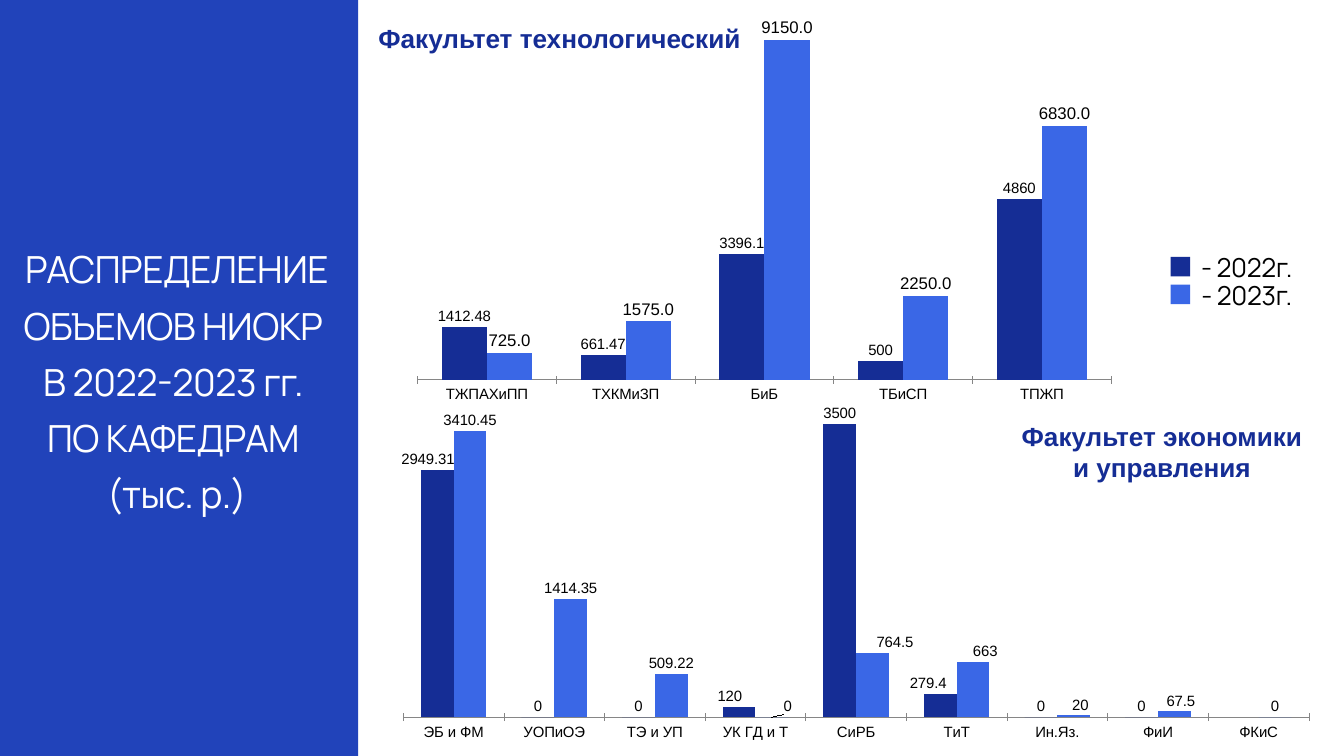
import pptx
import pptx.chart.data
import pptx.dml.color
import pptx.enum.chart
import pptx.enum.shapes
import pptx.enum.text
import pptx.util
from lxml import etree
from pptx.oxml.ns import qn

Cm = pptx.util.Cm
Pt = pptx.util.Pt
RGBColor = pptx.dml.color.RGBColor

PANEL_BLUE = RGBColor(0x21, 0x43, 0xBA)
NAVY = RGBColor(0x15, 0x2D, 0x95)
BRIGHT_BLUE = RGBColor(0x3A, 0x67, 0xE6)
AXIS_GREY = RGBColor(0x86, 0x86, 0x86)
WHITE = RGBColor(0xFF, 0xFF, 0xFF)
BLACK = RGBColor(0, 0, 0)

YEARS = [("2022", NAVY), ("2023", BRIGHT_BLUE)]

TITLE_LINES = ["РАСПРЕДЕЛЕНИЕ", "ОБЪЕМОВ НИОКР ", "В 2022-2023 гг. ",
               "ПО КАФЕДРАМ ", "(тыс. р.)"]

TECHNOLOGY = {
    "ТЖПАХиПП": (1412.48, 725),
    "ТХКМиЗП": (661.47, 1575),
    "БиБ": (3396.1, 9150),
    "ТБиСП": (500, 2250),
    "ТПЖП": (4860, 6830),
}
ECONOMICS = {
    "ЭБ и ФМ": (2949.31, 3410.45),
    "УОПиОЭ": (0, 1414.35),
    "ТЭ и УП": (0, 509.22),
    "УК ГД и Т": (120, 0),
    "СиРБ": (3500, 764.5),
    "ТиТ": (279.4, 663),
    "Ин.Яз.": (0, 20),
    "ФиИ": (0, 67.5),
    "ФКиС": (None, 0),
}
# Sideways label shifts per year, as shares of the chart width
ECONOMICS_SHIFTS = [
    {0: -0.01, 3: -0.01, 5: -0.013},
    {3: 0.017, 4: 0.024, 5: 0.013, 6: 0.007, 7: 0.007},
]


def place(shape, left, top, width, height):
    shape.left, shape.top = Cm(left), Cm(top)
    shape.width, shape.height = Cm(width), Cm(height)


def add_rectangle(shapes, left, top, width, height, color):
    rectangle = shapes.add_shape(pptx.enum.shapes.MSO_SHAPE.RECTANGLE,
                                 Cm(left), Cm(top), Cm(width), Cm(height))
    rectangle.shadow.inherit = False
    rectangle.fill.solid()
    rectangle.fill.fore_color.rgb = color
    rectangle.line.fill.background()
    return rectangle


def style_font(font, size, name, color, bold=False):
    font.size, font.name, font.bold = Pt(size), name, bold
    font.color.rgb = color


def write_tight_lines(frame, lines, size, color, leading, tracking):
    """Write centred Manrope lines with exact leading and letter spacing, both in points."""
    frame.margin_left = frame.margin_right = 0
    frame.margin_top = frame.margin_bottom = 0
    frame.word_wrap = True
    frame.auto_size = pptx.enum.text.MSO_AUTO_SIZE.NONE
    frame.vertical_anchor = pptx.enum.text.MSO_ANCHOR.TOP
    for number, line in enumerate(lines):
        paragraph = frame.add_paragraph() if number else frame.paragraphs[0]
        paragraph.alignment = pptx.enum.text.PP_ALIGN.CENTER
        paragraph.line_spacing = Pt(leading)
        paragraph.space_before = Pt(0)
        style_font(paragraph.font, size, "Manrope", color)
        run = paragraph.add_run()
        run.text = line
        run._r.get_or_add_rPr().set("spc", str(round(tracking * 100)))


def add_heading(slide, text, left, top, width, height, wrap):
    frame = slide.shapes.add_textbox(Cm(left), Cm(top), Cm(width), Cm(height)).text_frame
    frame.word_wrap = wrap
    paragraph = frame.paragraphs[0]
    paragraph.text = text
    paragraph.alignment = pptx.enum.text.PP_ALIGN.CENTER
    style_font(paragraph.font, 28, "Arial", NAVY, bold=True)


def add_layout(parent, position, **settings):
    """Insert a manual layout at a child position of a chart element."""
    layout = etree.Element(qn("c:layout"))
    manual = etree.SubElement(layout, qn("c:manualLayout"))
    for tag, value in settings.items():
        etree.SubElement(manual, qn(f"c:{tag}")).set("val", str(value))
    parent.insert(position, layout)


def shift_label(series, index, shift):
    label = series.points[index].data_label
    style_font(label.font, 16, "Arial", BLACK)
    label.position = pptx.enum.chart.XL_LABEL_POSITION.OUTSIDE_END
    element = series._element.xpath(f'c:dLbls/c:dLbl[c:idx/@val="{index}"]')[0]
    add_layout(element, 1, x=shift, y=0)


def add_volume_chart(slide, box, volumes, axis_max, plot_area, label_styles, shifts=({}, {})):
    """Add paired yearly columns; label_styles holds (size, number format) per year."""
    chart_data = pptx.chart.data.CategoryChartData()
    chart_data.categories = list(volumes)
    for (year, _), values in zip(YEARS, zip(*volumes.values())):
        chart_data.add_series(year, values)
    chart = slide.shapes.add_chart(pptx.enum.chart.XL_CHART_TYPE.COLUMN_CLUSTERED,
                                   *map(Cm, box), chart_data).chart
    chart.has_legend = False
    chart.has_title = False
    style_font(chart.font, 18, "Calibri", BLACK)

    left, top, width, height = plot_area
    plot_element = chart._chartSpace.chart.plotArea
    for old_layout in plot_element.findall(qn("c:layout")):
        plot_element.remove(old_layout)
    add_layout(plot_element, 0, layoutTarget="inner", xMode="edge", yMode="edge",
               x=left, y=top, w=width, h=height)

    value_axis = chart.value_axis
    value_axis.minimum_scale, value_axis.maximum_scale = 0, axis_max
    value_axis.has_major_gridlines = False
    value_axis.visible = False
    category_axis = chart.category_axis
    category_axis.major_tick_mark = pptx.enum.chart.XL_TICK_MARK.CROSS
    category_axis.format.line.color.rgb = AXIS_GREY
    style_font(category_axis.tick_labels.font, 16, "Arial", BLACK)

    plot = chart.plots[0]
    plot.gap_width, plot.overlap = 107, 0
    plot.vary_by_categories = False
    for series, (_, color), (size, number_format), moved in zip(
            plot.series, YEARS, label_styles, shifts):
        series.format.fill.solid()
        series.format.fill.fore_color.rgb = color
        series.invert_if_negative = False
        labels = series.data_labels
        labels.show_value = True
        labels.number_format = number_format
        labels.number_format_is_linked = False
        labels.position = pptx.enum.chart.XL_LABEL_POSITION.OUTSIDE_END
        style_font(labels.font, size, "Arial", BLACK)
        for index, shift in moved.items():
            shift_label(series, index, shift)


def add_title_panel(slide):
    panel = add_rectangle(slide.shapes, 0, 0, 13.54, 28.58, PANEL_BLUE)
    slide.shapes._spTree.insert(2, panel._element)  # behind the title
    title = slide.shapes.title
    place(title, -1.47, 8.89, 16.31, 10.69)
    write_tight_lines(title.text_frame, TITLE_LINES, 40, WHITE, 60.2, -0.5)


def add_year_legend(slide):
    legend = slide.shapes.add_group_shape()
    for row, (year, color) in enumerate(YEARS):
        top = 9.42 + row * 1.05
        add_rectangle(legend.shapes, 44.25, top + 0.29, 0.74, 0.74, color)
        caption = legend.shapes.add_textbox(Cm(44.93), Cm(top), Cm(4.39), Cm(1.27))
        write_tight_lines(caption.text_frame, [f"- {year}г."], 28, BLACK, 36.4, -0.3)


def main():
    deck = pptx.Presentation()
    deck.slide_width, deck.slide_height = Cm(50.8), Cm(28.58)
    slide = deck.slides.add_slide(deck.slide_layouts.get_by_name("Title Only"))
    add_title_panel(slide)
    add_volume_chart(slide, (15.24, 0, 27.31, 15.44), TECHNOLOGY, 10000,
                     (0.02, 0.02, 0.96, 0.91), [(16, "General"), (18, "0.0")])
    add_volume_chart(slide, (14.61, 13.87, 35.36, 14.27), ECONOMICS, 4000,
                     (0.018, 0.04, 0.968, 0.888), [(16, "General")] * 2, ECONOMICS_SHIFTS)
    add_year_legend(slide)
    add_heading(slide, "Факультет технологический", 13.97, 0.74, 14.35, 1.45, wrap=False)
    add_heading(slide, "Факультет экономики и управления", 38.3, 15.77, 11.23, 2.64, wrap=True)
    deck.save("out.pptx")


if __name__ == "__main__":
    main()
